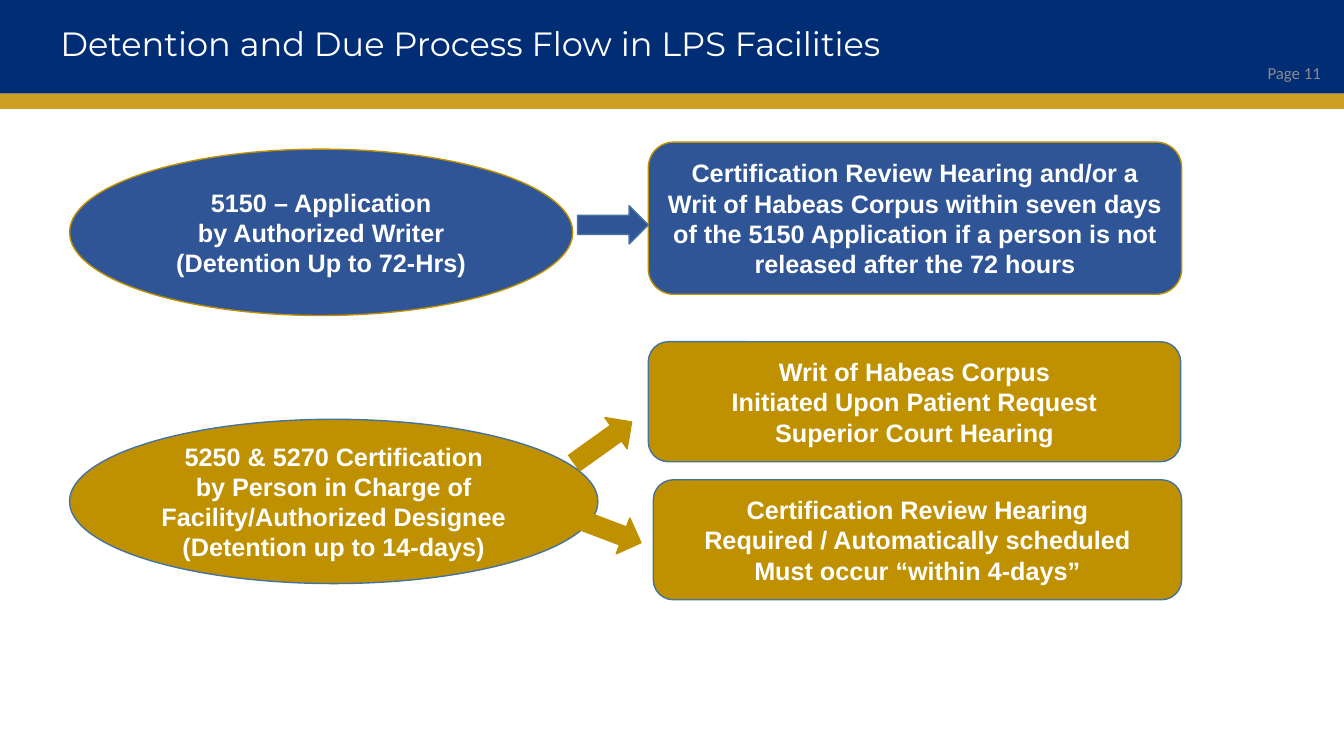
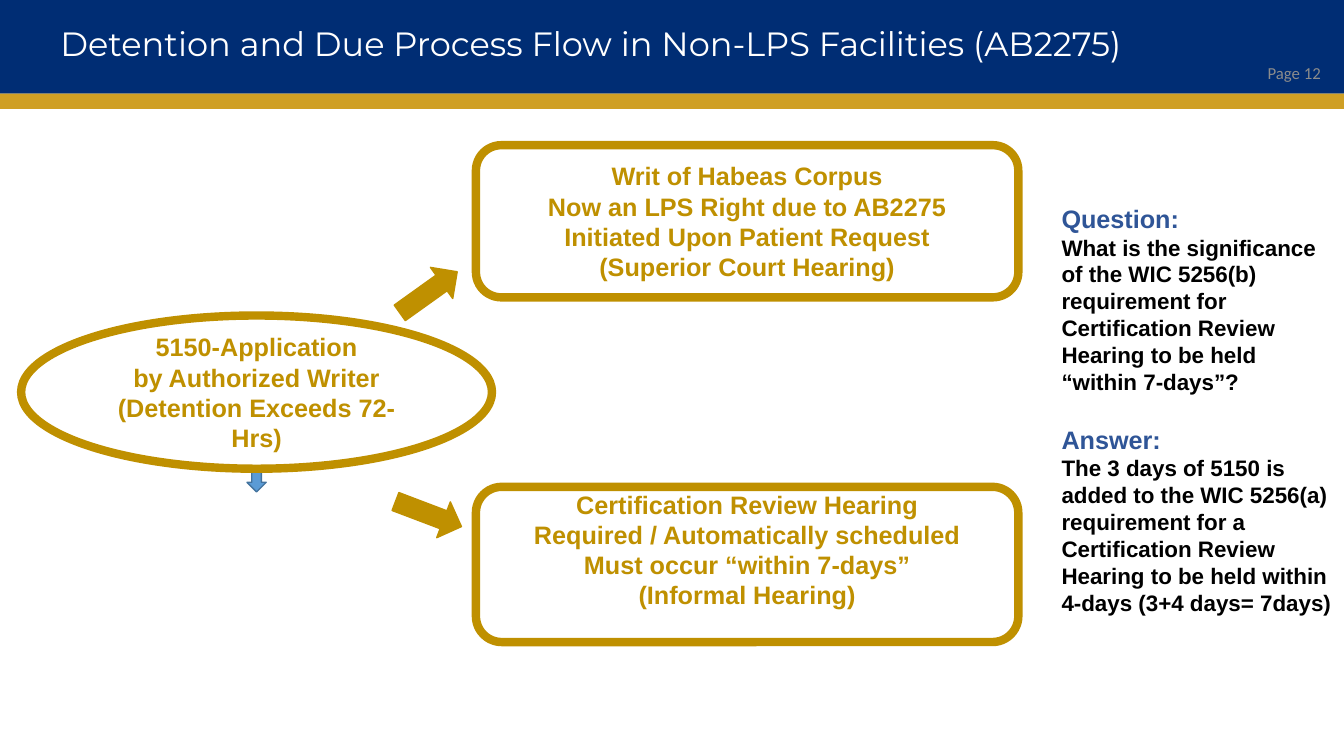
import pptx
import pptx.dml.color
import pptx.enum.shapes
import pptx.enum.text
import pptx.util

Inches = pptx.util.Inches
Pt = pptx.util.Pt
SHAPE = pptx.enum.shapes.MSO_SHAPE
ALIGN = pptx.enum.text.PP_ALIGN
MIDDLE = pptx.enum.text.MSO_ANCHOR.MIDDLE

COLORS = {
    "navy": "002D74",
    "band_gold": "CF9F24",
    "page_gray": "8C8C8C",
    "white": "FFFFFF",
    "black": "000000",
    "blue": "2F5597",
    "gold": "BF9000",
    "sky": "5B9BD5",
    "outline": "43739E",
}
SLIDE_WIDTH, SLIDE_HEIGHT = 13.33, 7.5
BAND_HEIGHT, STRIPE_HEIGHT = 0.93, 0.15
ARROW_SIZE = (0.7, 0.38)
RISING, FALLING = 324.4, 20.8


def rgb(color):
    """Return the named colour."""
    return pptx.dml.color.RGBColor.from_string(COLORS[color])


def add_figure(slide, kind, box, fill, line=None, weight=1, rotation=0):
    """Add a filled preset shape, outlined when a line colour is given."""
    figure = slide.shapes.add_shape(kind, *map(Inches, box))
    figure.shadow.inherit = False
    figure.fill.solid()
    figure.fill.fore_color.rgb = rgb(fill)
    if line:
        figure.line.color.rgb = rgb(line)
        figure.line.width = Pt(weight)
    else:
        figure.line.fill.background()
    figure.rotation = rotation
    return figure


def write_lines(frame, lines, size, color, font="Arial", bold=True, align=ALIGN.LEFT):
    """Append one paragraph per line, starting with the empty first one."""
    for line in lines:
        first = frame.paragraphs[0]
        paragraph = frame.add_paragraph() if first.runs else first
        paragraph.alignment = align
        run = paragraph.add_run()
        run.text = line
        run.font.size = Pt(size)
        run.font.name = font
        run.font.bold = bold
        run.font.color.rgb = rgb(color)


def add_label(slide, box, anchor=MIDDLE):
    """Add a wrapping text box and return its text frame."""
    frame = slide.shapes.add_textbox(*map(Inches, box)).text_frame
    frame.word_wrap = True
    frame.vertical_anchor = anchor
    return frame


def add_step(slide, kind, box, lines, fill, line, text="white", weight=1):
    """Add a process step with centred bold text and return its text frame."""
    frame = add_figure(slide, kind, box, fill, line, weight).text_frame
    frame.word_wrap = True
    frame.vertical_anchor = MIDDLE
    write_lines(frame, lines, 18, text, align=ALIGN.CENTER)
    return frame


def add_outlined_step(slide, kind, box, lines):
    """Add a white step with a heavy gold outline and gold text."""
    return add_step(slide, kind, box, lines, "white", "gold", "gold", 6)


def add_flow_arrow(slide, left, top, rotation=0, fill="gold", line="gold"):
    """Add a block arrow leading from one step to the next."""
    add_figure(slide, SHAPE.RIGHT_ARROW, (left, top, *ARROW_SIZE), fill, line,
               rotation=rotation)


def add_framed_slide(deck, title, page):
    """Add a slide with the header band, stripe, page number and title."""
    slide = deck.slides.add_slide(deck.slide_layouts[6])
    add_figure(slide, SHAPE.RECTANGLE, (0, 0, SLIDE_WIDTH, BAND_HEIGHT), "navy")
    add_figure(slide, SHAPE.RECTANGLE,
               (0, BAND_HEIGHT, SLIDE_WIDTH, STRIPE_HEIGHT), "band_gold")
    write_lines(add_label(slide, (12.03, 0.52, 1.17, 0.4)), [f"Page {page}"],
                12, "page_gray", "Calibri", False, ALIGN.RIGHT)
    heading = add_label(slide, (0.5, 0, 12.33, 0.91))
    write_lines(heading, [title], 24, "white", "Montserrat", False)
    heading.paragraphs[0].line_spacing = 0.9
    return slide


def build_lps_slide(deck):
    """Build the flow for LPS facilities."""
    slide = add_framed_slide(
        deck, "Detention and Due Process Flow in LPS Facilities", 11)
    add_step(slide, SHAPE.OVAL, (0.69, 1.48, 4.99, 1.65),
             ["5150 – Application", "by Authorized Writer", "(Detention Up to 72-Hrs)"],
             "blue", "gold")
    add_step(slide, SHAPE.ROUNDED_RECTANGLE, (6.43, 1.41, 5.29, 1.51),
             ["Certification Review Hearing and/or a Writ of Habeas Corpus within "
              "seven days of the 5150 Application if a person is not released "
              "after the 72 hours"],
             "blue", "gold")
    add_step(slide, SHAPE.ROUNDED_RECTANGLE, (6.43, 3.39, 5.28, 1.19),
             ["Writ of Habeas Corpus", "Initiated Upon Patient Request",
              "Superior Court Hearing"],
             "gold", "outline")
    add_step(slide, SHAPE.OVAL, (0.69, 4.16, 5.24, 1.63),
             ["5250 & 5270 Certification",
              "by Person in Charge of Facility/Authorized Designee",
              "(Detention up to 14-days)"],
             "gold", "outline")
    add_step(slide, SHAPE.ROUNDED_RECTANGLE, (6.48, 4.76, 5.24, 1.19),
             ["Certification Review Hearing", "Required / Automatically scheduled",
              "Must occur “within 4-days”"],
             "gold", "outline")
    add_flow_arrow(slide, 5.68, 5.07, FALLING)
    add_flow_arrow(slide, 5.63, 4.2, RISING)
    add_flow_arrow(slide, 5.73, 2.04, fill="blue", line="outline")


def build_non_lps_slide(deck):
    """Build the flow for non-LPS facilities with its question and answer."""
    slide = add_framed_slide(
        deck, "Detention and Due Process Flow in Non-LPS Facilities (AB2275)", 12)
    add_figure(slide, SHAPE.DOWN_ARROW, (2.45, 4.56, 0.19, 0.32), "sky", "outline")
    add_outlined_step(slide, SHAPE.ROUNDED_RECTANGLE, (4.72, 1.44, 5.38, 1.51),
                      ["Writ of Habeas Corpus", "Now an LPS Right due to AB2275",
                       "Initiated Upon Patient Request", "(Superior Court Hearing)"])
    add_outlined_step(slide, SHAPE.OVAL, (0.21, 3.13, 4.67, 1.52),
                      ["5150-Application", "by Authorized Writer",
                       "(Detention Exceeds 72-Hrs)"])
    hearing = add_outlined_step(
        slide, SHAPE.ROUNDED_RECTANGLE, (4.72, 4.83, 5.38, 1.54),
        ["Certification Review Hearing", "Required / Automatically scheduled",
         "Must occur “within 7-days”", "(Informal Hearing)"])
    hearing.margin_bottom = Inches(0.35)
    add_flow_arrow(slide, 3.9, 4.91, FALLING)
    add_flow_arrow(slide, 3.9, 2.71, RISING)

    discussion = add_label(slide, (10.43, 1.97, 2.91, 4.24),
                           pptx.enum.text.MSO_ANCHOR.TOP)
    write_lines(discussion, ["Question:"], 18, "blue")
    write_lines(discussion,
                ["What is the significance of the WIC 5256(b) requirement for "
                 "Certification Review Hearing to be held “within 7-days”?"],
                16, "black")
    write_lines(discussion, ["Answer:"], 18, "blue")
    discussion.paragraphs[-1].space_before = Pt(21)
    write_lines(discussion,
                ["The 3 days of 5150 is added to the WIC 5256(a) requirement for a "
                 "Certification Review Hearing to be held within 4-days "
                 "(3+4 days= 7days)"],
                16, "black")


def main():
    """Build and save the presentation."""
    deck = pptx.Presentation()
    deck.slide_width = Inches(SLIDE_WIDTH)
    deck.slide_height = Inches(SLIDE_HEIGHT)
    build_lps_slide(deck)
    build_non_lps_slide(deck)
    deck.save("out.pptx")


if __name__ == "__main__":
    main()
